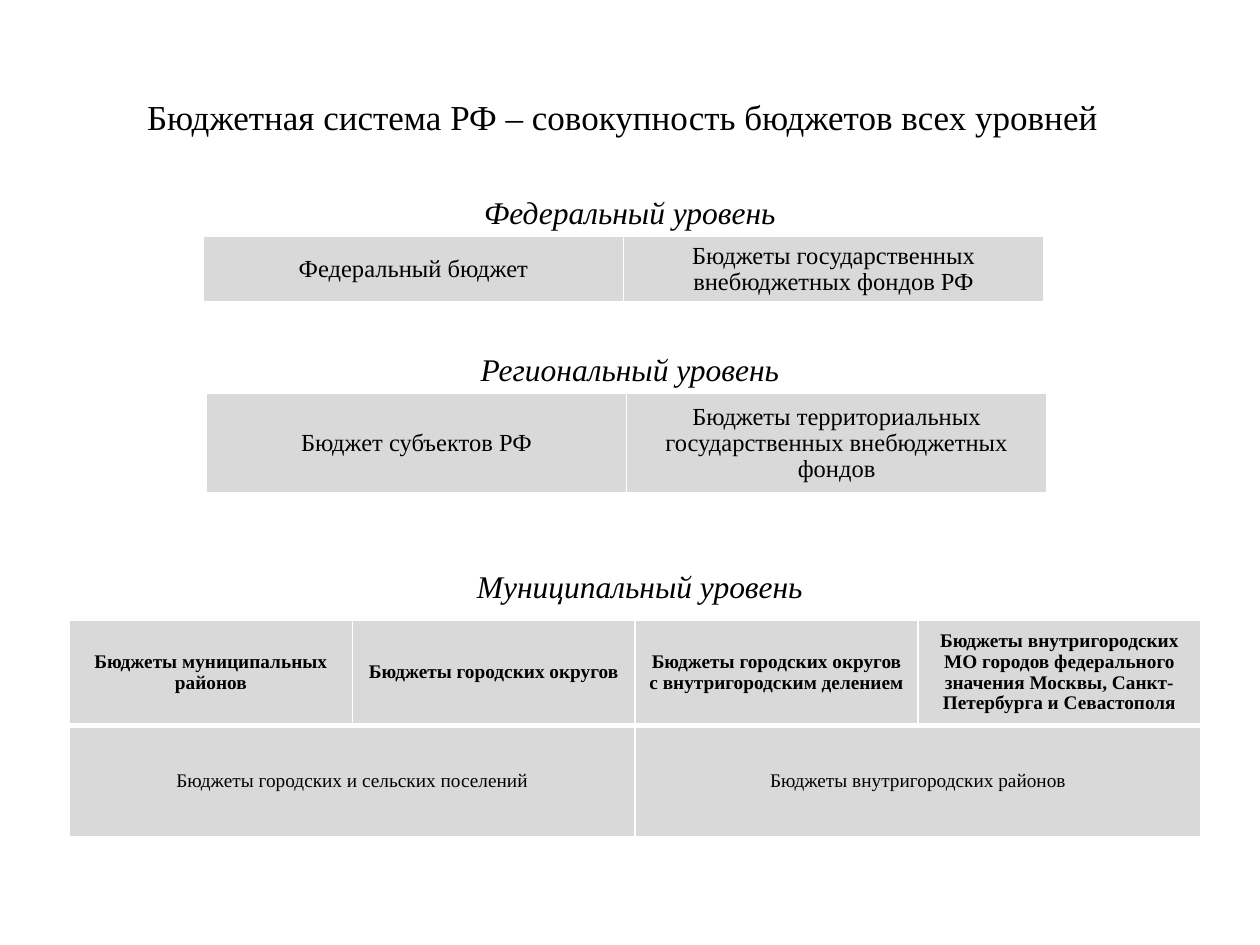
from dataclasses import dataclass

from lxml import etree
from pptx import Presentation
from pptx.dml.color import RGBColor
from pptx.enum.text import MSO_ANCHOR, MSO_AUTO_SIZE, PP_ALIGN
from pptx.oxml.ns import qn
from pptx.util import Cm, Pt

CENTER = PP_ALIGN.CENTER
MIDDLE = MSO_ANCHOR.MIDDLE
GROW = MSO_AUTO_SIZE.SHAPE_TO_FIT_TEXT
NO_FIT = MSO_AUTO_SIZE.NONE


@dataclass(frozen=True)
class Theme:
    font: str = "Times New Roman"
    ink: str = "000000"
    fill: str = "D9D9D9"
    line: str = "FFFFFF"
    title: int = 20
    label: int = 18
    cell: int = 14
    small: int = 11
    thin: int = 1
    thick: int = 3
    lead: float = 0.96


class Deck:
    def __init__(self, theme, slide):
        self.theme = theme
        self.slide = slide

    def put_text(self, frame, text, size, bold=False, italic=False):
        frame.text = text
        frame.word_wrap = True
        para = frame.paragraphs[0]
        para.alignment = CENTER
        font = para.font
        font.name = self.theme.font
        font.size = Pt(size)
        font.bold = bold
        font.italic = italic
        font.color.rgb = RGBColor.from_string(self.theme.ink)
        return para

    def title(self, text, left, top, width, height):
        shape = self.slide.shapes.title
        shape.left, shape.top = Cm(left), Cm(top)
        shape.width, shape.height = Cm(width), Cm(height)
        frame = shape.text_frame
        self.put_text(frame, text, self.theme.title)
        frame.auto_size = NO_FIT
        frame.vertical_anchor = MIDDLE

    def label(self, text, left, top):
        box = self.slide.shapes.add_textbox(Cm(left), Cm(top), Cm(12.7), Cm(1.02))
        self.put_text(box.text_frame, text, self.theme.label, italic=True)
        box.text_frame.auto_size = GROW

    def edge(self, cell, side, width):
        props = cell._tc.get_or_add_tcPr()
        line = etree.SubElement(props, qn(f"a:ln{side}"), w=str(Pt(width)))
        fill = etree.SubElement(line, qn("a:solidFill"))
        etree.SubElement(fill, qn("a:srgbClr"), val=self.theme.line)

    def table(self, rows, left, top, width, heights, size, bold=False):
        count = len(rows[0])
        frame = self.slide.shapes.add_table(
            len(rows), count, Cm(left), Cm(top), Cm(width), Cm(sum(heights))
        )
        grid = frame.table
        for col in grid.columns:
            col.width = Cm(width / count)
        for r, texts in enumerate(rows):
            grid.rows[r].height = Cm(heights[r])
            span = count // len(texts)
            for c in range(count):
                self.paint(grid.cell(r, c), r == 0)
            for i, text in enumerate(texts):
                cell = grid.cell(r, i * span)
                if span > 1:
                    cell.merge(grid.cell(r, (i + 1) * span - 1))
                para = self.put_text(cell.text_frame, text, size, bold and r == 0)
                para.line_spacing = self.theme.lead

    def paint(self, cell, first):
        theme = self.theme
        self.edge(cell, "L", theme.thin)
        self.edge(cell, "R", theme.thin)
        if first:
            self.edge(cell, "T", theme.thin)
        self.edge(cell, "B", theme.thick if first else theme.thin)
        cell.fill.solid()
        cell.fill.fore_color.rgb = RGBColor.from_string(theme.fill)
        cell.vertical_anchor = MIDDLE
        cell.margin_top = cell.margin_bottom = Cm(0.1)


def main():
    show = Presentation()
    show.slide_width, show.slide_height = Cm(25.4), Cm(19.05)
    theme = Theme()
    deck = Deck(theme, show.slides.add_slide(show.slide_layouts[5]))

    deck.title(
        "Бюджетная система РФ – совокупность бюджетов всех уровней",
        0.84, 0.76, 23.42, 3.18,
    )

    deck.label("Федеральный уровень", 6.35, 3.76)
    deck.table(
        [["Федеральный бюджет", "Бюджеты государственных внебюджетных фондов РФ"]],
        4.1, 4.76, 16.94, [1.35], theme.cell,
    )

    deck.label("Региональный уровень", 6.35, 6.94)
    deck.table(
        [[
            "Бюджет субъектов РФ",
            "Бюджеты территориальных государственных внебюджетных фондов",
        ]],
        4.16, 7.93, 16.94, [2.03], theme.cell,
    )

    deck.label("Муниципальный уровень", 6.55, 11.3)
    deck.table(
        [
            [
                "Бюджеты муниципальных районов",
                "Бюджеты городских округов",
                "Бюджеты городских округов с внутригородским делением",
                "Бюджеты внутригородских МО городов федерального значения "
                "Москвы, Санкт-Петербурга и Севастополя",
            ],
            [
                "Бюджеты городских и сельских поселений",
                "Бюджеты внутригородских районов",
            ],
        ],
        1.4, 12.5, 22.81, [2.12, 2.25], theme.small, bold=True,
    )

    show.save("out.pptx")


if __name__ == "__main__":
    main()
